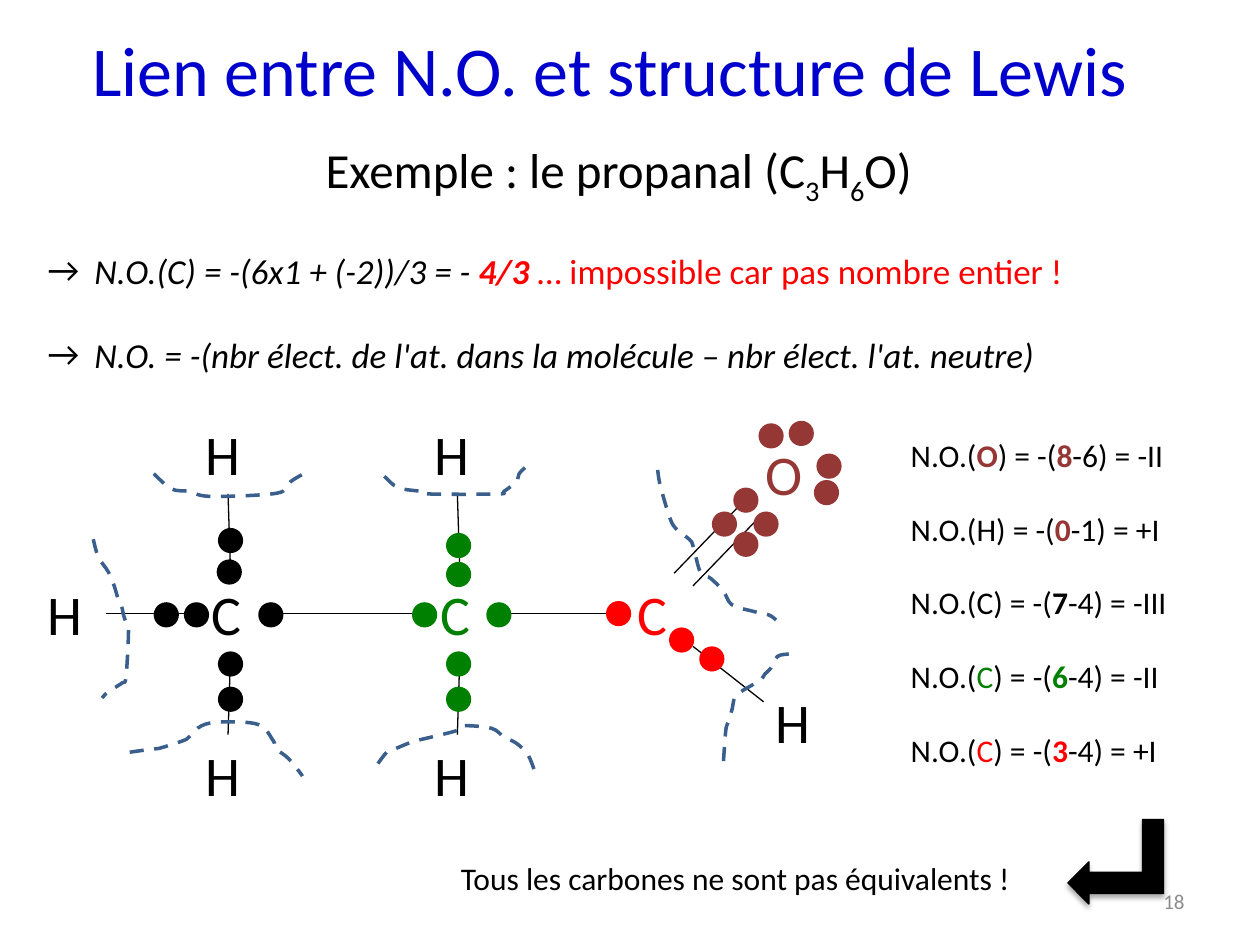
from dataclasses import dataclass

from lxml.etree import SubElement
from pptx import Presentation
from pptx.dml.color import RGBColor
from pptx.enum.dml import MSO_LINE
from pptx.enum.shapes import MSO_CONNECTOR, MSO_SHAPE
from pptx.enum.text import MSO_ANCHOR, PP_ALIGN
from pptx.oxml import parse_xml
from pptx.oxml.ns import nsdecls, qn
from pptx.util import Inches, Pt

FONT = "Calibri"
BLACK, GREEN, RED, BROWN = "000000", "008000", "FF0000", "953735"
BLUE, GREY, CUT = "0000CC", "8C8C8C", "3A5F8C"
DOT = 0.2
ATOM_WIDTH = {"C": 0.49, "H": 0.57, "O": 0.54}


@dataclass
class Run:
    text: str
    color: str = BLACK
    bold: bool = False
    italic: bool = False
    baseline: int = 0


@dataclass
class Atom:
    symbol: str
    x: float
    y: float
    color: str = BLACK


ATOMS = [
    Atom("C", 1.58, 4.55), Atom("C", 3.4, 4.55, GREEN), Atom("C", 4.96, 4.55, RED),
    *[Atom("H", x, y) for y in (3.28, 5.83) for x in (1.53, 3.35)],
    Atom("H", 0.28, 4.55), Atom("H", 6.06, 5.41), Atom("O", 5.98, 3.44, BROWN),
]
BONDS = [
    *[(x, y, x + 0.02, inner) for x in (1.81, 3.63) for y, inner in ((3.92, 4.55), (5.83, 5.19))],
    *[(x1, 4.87, x2, 4.87) for x1, x2 in ((0.84, 1.58), (2.07, 3.4), (3.89, 4.96))],
    (5.5, 5.13, 6.06, 5.57), (5.35, 4.55, 5.91, 3.97), (5.5, 4.65, 6.06, 4.07),
]
ELECTRONS = {
    BLACK: [(1.72, 4.44), (1.73, 4.19), (1.73, 5.17), (1.73, 5.45), (1.46, 4.78), (1.22, 4.78),
            (2.05, 4.78)],
    GREEN: [(3.27, 4.78), (3.54, 4.46), (3.54, 4.23), (3.54, 5.17), (3.54, 5.45), (3.86, 4.78)],
    RED: [(4.81, 4.77), (5.31, 4.98), (5.55, 5.13)],
    BROWN: [(5.98, 4.06), (5.82, 3.87), (5.65, 4.06), (5.82, 4.22), (6.02, 3.36), (6.26, 3.34),
            (6.48, 3.6), (6.46, 3.81)],
}
CUTS = [
    [(5.22, 3.73), (5.24, 3.85), (5.31, 4.09), (5.36, 4.19), (5.47, 4.28), (5.5, 4.33), (5.55, 4.52),
     (5.59, 4.57), (5.64, 4.59), (5.74, 4.69), (5.81, 4.8), (5.97, 4.85), (6.1, 4.88), (6.16, 4.92)],
    [(6.26, 5.19), (6.17, 5.21), (6.12, 5.3), (6.07, 5.35), (6.03, 5.4), (5.88, 5.49), (5.83, 5.54),
     (5.81, 5.63), (5.78, 5.73), (5.76, 5.8), (5.74, 6.07)],
    [(3, 6.06), (3.07, 5.97), (3.12, 5.95), (3.29, 5.88), (3.34, 5.87), (3.62, 5.8), (3.67, 5.76),
     (3.9, 5.78), (4, 5.85), (4.1, 5.9), (4.19, 5.99), (4.24, 6.11)],
    [(1.03, 5.97), (1.17, 5.95), (1.26, 5.94), (1.45, 5.88), (1.5, 5.85), (1.6, 5.76), (1.76, 5.73),
     (2.05, 5.75), (2.17, 5.88), (2.19, 5.94), (2.29, 6.02), (2.38, 6.13), (2.4, 6.16)],
    [(0.74, 4.28), (0.78, 4.42), (0.86, 4.54), (0.91, 4.66), (0.93, 4.73), (0.97, 4.83), (0.98, 4.88),
     (1, 4.94), (1.02, 5), (1, 5.37), (0.97, 5.42), (0.86, 5.49), (0.81, 5.54)],
    [(1.22, 3.76), (1.36, 3.88), (1.5, 3.9), (1.67, 3.94), (2.16, 3.92), (2.28, 3.87), (2.31, 3.82),
     (2.43, 3.75), (2.45, 3.75)],
    [(3.05, 3.78), (3.16, 3.87), (3.34, 3.9), (3.4, 3.92), (3.95, 3.92), (4, 3.9), (4.1, 3.82),
     (4.12, 3.76), (4.19, 3.69)],
]
NUMBERS = [
    ("O", BROWN, True, "8", BROWN, "-6) = -II"),
    ("H", BLACK, False, "0", BROWN, "-1) = +I"),
    ("C", BLACK, False, "7", BLACK, "-4) = -III"),
    ("C", GREEN, False, "6", GREEN, "-4) = -II"),
    ("C", RED, False, "3", RED, "-4) = +I"),
]
RULES = [
    [Run("N.O.(C) = -(6x1 + (-2))/3 = - ", italic=True), Run("4/3 ", RED, True, True),
     Run("… impossible car pas nombre entier !", RED)],
    [Run("N.O. = -(nbr élect. de l'at. dans la molécule – nbr élect. l'at. neutre)", italic=True)],
]
FORMULA = [Run("Exemple : le propanal (C"), Run("3", baseline=-25000), Run("H"),
           Run("6", baseline=-25000), Run("O)")]


def rgb(color: str) -> RGBColor:
    """Turn a hex string into a colour."""
    return RGBColor.from_string(color)


def add_text(s, x, y, w, h, paragraphs: list[list[Run]], size,
             align=PP_ALIGN.LEFT, anchor=MSO_ANCHOR.TOP, bullet="", gap=0):
    """Add a text box holding paragraphs of formatted runs."""
    tf = s.shapes.add_textbox(*map(Inches, (x, y, w, h))).text_frame
    tf.word_wrap, tf.vertical_anchor = True, anchor
    for i, runs in enumerate(paragraphs):
        p = tf.add_paragraph() if i else tf.paragraphs[0]
        p.alignment = align
        if i:
            p.space_before = Pt(gap)
        if bullet:
            pPr = p._p.get_or_add_pPr()
            pPr.set("marL", str(Inches(0.37)))
            pPr.set("indent", str(-Inches(0.37)))
            SubElement(pPr, qn("a:buFont")).set("typeface", FONT)
            SubElement(pPr, qn("a:buChar")).set("char", bullet)
        for run in runs:
            r = p.add_run()
            r.text = run.text
            style = {"name": FONT, "size": Pt(size), "bold": run.bold, "italic": run.italic}
            for key, value in style.items():
                setattr(r.font, key, value)
            r.font.color.rgb = rgb(run.color)
            if run.baseline:
                r._r.get_or_add_rPr().set("baseline", str(run.baseline))


def add_bond(s, ends: tuple[float, ...]):
    """Draw one bond between two atoms."""
    bond = s.shapes.add_connector(MSO_CONNECTOR.STRAIGHT, *map(Inches, ends))
    bond.line.color.rgb = rgb(BLACK)
    bond.line.width = Pt(0.75)
    SubElement(bond._element.spPr, qn("a:effectLst"))


def add_solid(s, kind, box: tuple[float, ...], color: str):
    """Add a filled preset shape without an outline."""
    sp = s.shapes.add_shape(kind, *map(Inches, box))
    sp.fill.solid()
    sp.fill.fore_color.rgb = rgb(color)
    sp.line.fill.background()
    sp.shadow.inherit = False
    return sp


def add_cut(s, points: list[tuple[float, float]]):
    """Draw a smooth dashed curve that separates two atoms."""
    padded, vertices = [points[0], *points, points[-1]], []
    for a, b, c, d in zip(padded, padded[1:], padded[2:], padded[3:]):
        vertices += [tuple(q + (r - p) / 6 for p, q, r in zip(a, b, c)),
                     tuple(q + (p - r) / 6 for p, q, r in zip(b, c, d)), c]
    fb = s.shapes.build_freeform(*map(Inches, points[0]))
    fb.add_line_segments([(Inches(x), Inches(y)) for x, y in vertices], close=False)
    sp = fb.convert_to_shape()
    lines = list(sp._element.iter(qn("a:lnTo")))
    for trio in zip(lines[::3], lines[1::3], lines[2::3]):
        curve = parse_xml(f'<a:cubicBezTo {nsdecls("a")}/>')
        trio[0].addprevious(curve)
        for line in trio:
            curve.append(line[0])
            line.getparent().remove(line)
    sp.shadow.inherit = False
    sp.fill.background()
    sp.line.color.rgb = rgb(CUT)
    for key, value in {"width": Pt(2), "dash_style": MSO_LINE.DASH}.items():
        setattr(sp.line, key, value)


def add_arrow(s):
    """Draw the bent arrow that points to the conclusion."""
    sp = add_solid(s, MSO_SHAPE.BENT_UP_ARROW, (8.52, 6.46, 0.67, 0.76), BLACK)
    sp.rotation = 90
    sp._element.spPr.xfrm.set("flipV", "1")
    sp.line.color.rgb = rgb(BLACK)
    sp.line.width = Pt(0.75)
    sp._element.spPr.find(qn("a:effectLst")).append(parse_xml(
        f'<a:outerShdw {nsdecls("a")} blurRad="{Pt(3.1)}" dist="{Pt(1.8)}" dir="5400000" '
        f'rotWithShape="0"><a:srgbClr val="{BLACK}"><a:alpha val="35000"/></a:srgbClr></a:outerShdw>'))


def main():
    """Build the slide and save it."""
    prs = Presentation()
    prs.slide_width, prs.slide_height = Inches(10), Inches(7.5)
    s = prs.slides.add_slide(prs.slide_layouts[6])
    centred = {"align": PP_ALIGN.CENTER, "anchor": MSO_ANCHOR.MIDDLE}
    for atom in ATOMS:
        add_text(s, atom.x, atom.y, ATOM_WIDTH[atom.symbol], 0.64, [[Run(atom.symbol, atom.color)]], 32)
    for ends in BONDS:
        add_bond(s, ends)
    add_text(s, 0.41, 0.97, 9, 0.81, [FORMULA], 28, **centred)
    add_text(s, 0.28, 1.93, 9.76, 1.11, RULES, 20, bullet="→", gap=24)
    for color, spots in ELECTRONS.items():
        for x, y in spots:
            add_solid(s, MSO_SHAPE.OVAL, (x, y, DOT, DOT), color)
    for points in CUTS:
        add_cut(s, points)
    for i, (symbol, color, bold, count, count_color, result) in enumerate(NUMBERS):
        runs = [Run("N.O.("), Run(symbol, color, bold), Run(") = -("),
                Run(count, count_color, True), Run(result)]
        add_text(s, 7.13, 3.41 + 0.585 * i, 2.63, 0.4, [runs], 18)
    add_text(s, 3.56, 6.77, 4.98, 0.4, [[Run("Tous les carbones ne sont pas équivalents !")]], 18)
    add_arrow(s)
    add_text(s, 0.59, 0.21, 8.5, 0.67, [[Run("Lien entre N.O. et structure de Lewis", BLUE)]], 40, **centred)
    add_text(s, 7.17, 6.95, 2.33, 0.4, [[Run("18", GREY)]], 12, PP_ALIGN.RIGHT, MSO_ANCHOR.MIDDLE)
    prs.save("out.pptx")


if __name__ == "__main__":
    main()
